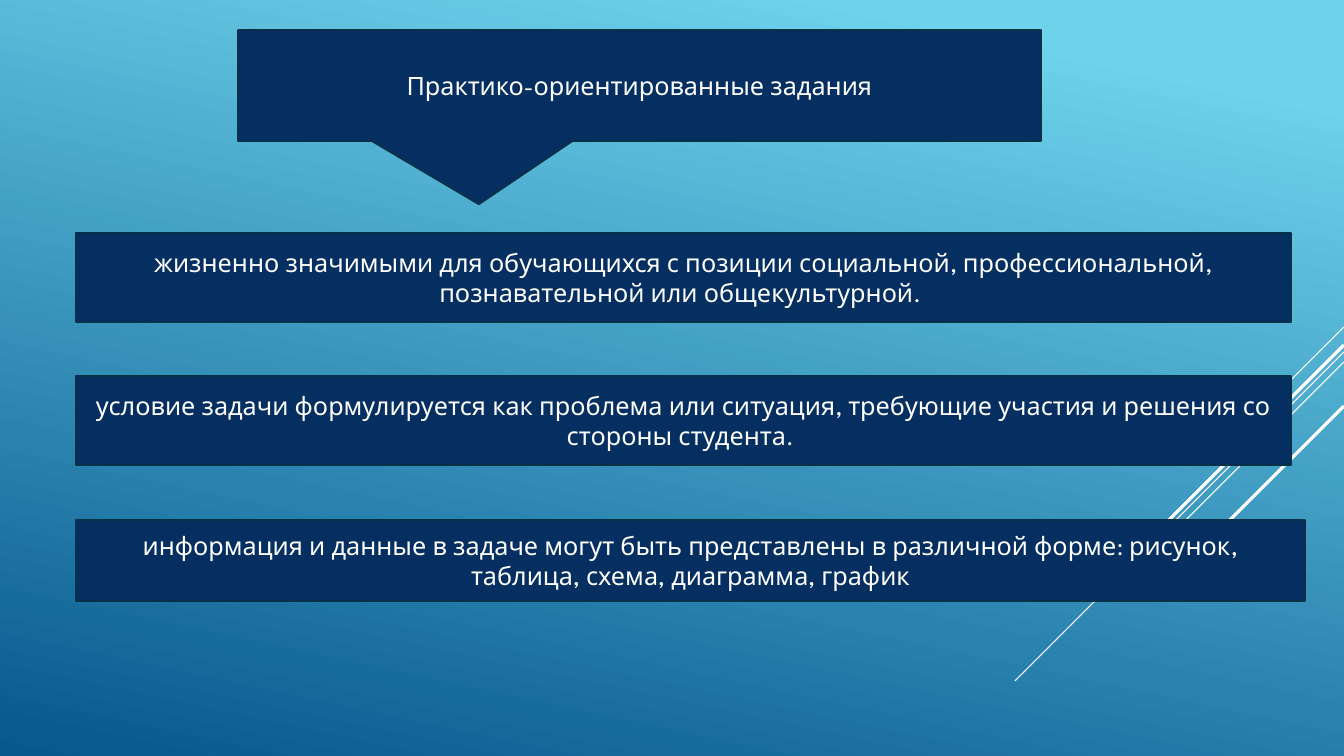
from lxml.etree import SubElement
from pptx import Presentation
from pptx.dml.color import RGBColor
from pptx.enum.shapes import MSO_CONNECTOR, MSO_SHAPE
from pptx.enum.text import MSO_ANCHOR, PP_ALIGN
from pptx.oxml.ns import qn
from pptx.util import Emu, Pt

EMU_PER_PX = 914400 / 100.8
WIDTH, HEIGHT = 1344, 756
NAVY, OUTLINE, WHITE = "052F61", "043148", "FFFFFF"
FONT = {"name": "League Spartan", "size": Pt(18)}

# Diagonals from the right edge: top, run to the left and down, weight
DIAGONALS = [
    (327, 101, 0.75),
    (352, 329, 0.75),
    (362, 209, 0.75),
    (345, 192, 2.25),
    (406, 140, 2.25),
]

# Features of the tasks: top, width, height, text
FEATURES = [
    (233, 1215, 89, "жизненно значимыми для обучающихся с позиции социальной, "
                    "профессиональной, познавательной или общекультурной. "),
    (376, 1215, 89, "условие задачи формулируется как проблема или ситуация, "
                    "требующие участия и решения со стороны студента. "),
    (520, 1229, 81, "информация и данные в задаче могут быть представлены в "
                    "различной форме: рисунок, таблица, схема, диаграмма, график"),
]


def px(n):
    return Emu(round(n * EMU_PER_PX))


def color(target, value):
    target.rgb = RGBColor.from_string(value)


def set_background(s):
    fill = s.background.fill
    fill.gradient()
    fill.gradient_angle = 258
    for stop, (position, value) in zip(fill.gradient_stops,
                                       [(0.1, "6ED2EB"), (1, "06588E")]):
        stop.position = position
        color(stop.color, value)


def add_diagonal(s, top, run, weight):
    line = s.shapes.add_connector(MSO_CONNECTOR.STRAIGHT, px(WIDTH), px(top),
                                  px(WIDTH - run), px(top + run))
    color(line.line.color, WHITE)
    line.line.width = Pt(weight)
    SubElement(line._element.spPr, qn("a:effectLst"))


def add_box(s, kind, x, y, w, h, text):
    sp = s.shapes.add_shape(kind, px(x), px(y), px(w), px(h))
    sp.shadow.inherit = False
    sp.fill.solid()
    color(sp.fill.fore_color, NAVY)
    color(sp.line.color, OUTLINE)
    sp.line.width = Pt(1.25)
    tf = sp.text_frame
    tf.word_wrap = True
    tf.vertical_anchor = MSO_ANCHOR.MIDDLE
    p = tf.paragraphs[0]
    p.alignment = PP_ALIGN.CENTER
    r = p.add_run()
    r.text = text
    for name, value in FONT.items():
        setattr(r.font, name, value)
    color(r.font.color, WHITE)
    return sp


def main():
    prs = Presentation()
    prs.slide_width, prs.slide_height = px(WIDTH), px(HEIGHT)
    s = prs.slides.add_slide(prs.slide_layouts[6])

    # Backdrop
    set_background(s)
    for diagonal in DIAGONALS:
        add_diagonal(s, *diagonal)

    # Feature bars
    for top, width, height, text in FEATURES:
        add_box(s, MSO_SHAPE.RECTANGLE, 76, top, width, height, text)

    # Heading callout pointing at the bars
    callout = add_box(s, MSO_SHAPE.RECTANGULAR_CALLOUT, 238, 30, 803, 111,
                      "Практико-ориентированные задания")
    callout.adjustments[0] = -0.2
    callout.adjustments[1] = 1.07

    prs.save("out.pptx")


if __name__ == "__main__":
    main()
